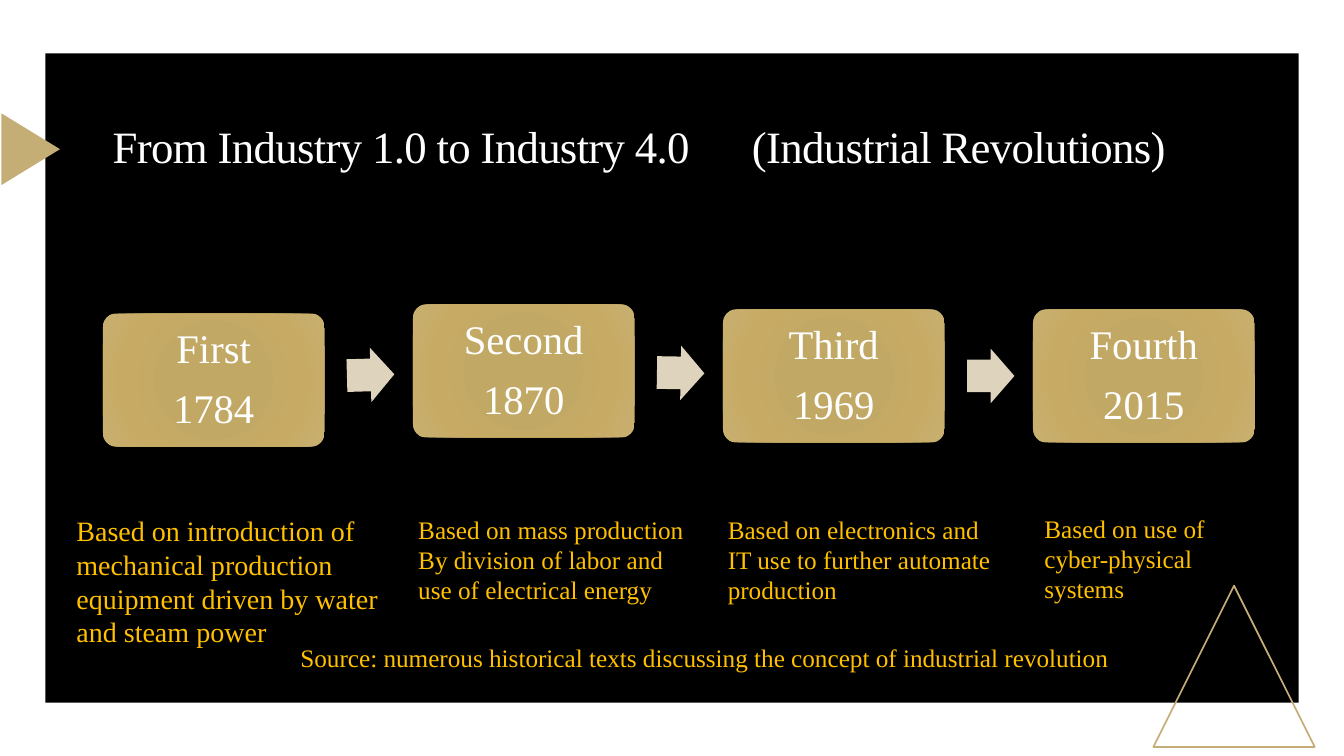
from lxml import etree
from pptx import Presentation
from pptx.dml.color import RGBColor
from pptx.enum.shapes import MSO_SHAPE
from pptx.enum.text import MSO_ANCHOR, PP_ALIGN
from pptx.oxml.ns import qn
from pptx.util import Inches, Pt

RECT, ROUND = MSO_SHAPE.RECTANGLE, MSO_SHAPE.ROUNDED_RECTANGLE
PEAK, ARROW = MSO_SHAPE.ISOSCELES_TRIANGLE, MSO_SHAPE.RIGHT_ARROW
LEFT, CENTER = PP_ALIGN.LEFT, PP_ALIGN.CENTER
TOP, MIDDLE = MSO_ANCHOR.TOP, MSO_ANCHOR.MIDDLE

BLACK = RGBColor(0x00, 0x00, 0x00)
WHITE = RGBColor(0xFF, 0xFF, 0xFF)
CREAM = RGBColor(0xFF, 0xFE, 0xFF)
GOLD = RGBColor(0xC4, 0xAE, 0x75)
SAND = RGBColor(0xDE, 0xD3, 0xBD)
AMBER = RGBColor(0xFF, 0xC0, 0x00)
GLOW = [
    (0, RGBColor(0xC2, 0xA7, 0x62)),
    (34, RGBColor(0xC2, 0xA8, 0x65)),
    (70, RGBColor(0xC7, 0xAB, 0x64)),
    (100, RGBColor(0xC8, 0xB0, 0x71)),
]

FONT = "Times New Roman"
WIDE, HIGH = Inches(13.33), Inches(7.5)

# All places and sizes are percent of the slide's width and height
EDGE, STEP = 7.65, 23.07  # left of the first card, distance between cards
CARDS = [
    ("First", "1784", 41.47),
    ("Second", "1870", 40.27),
    ("Third", "1969", 40.93),
    ("Fourth", "2015", 40.93),
]
ARROWS = [(46, -1.6), (45.73, 1), (46.13, 0)]  # top, turn
NOTES = [
    ((4.95, 67.33, 80.72, 19.33), 20,
     ["Based on introduction of", "mechanical production",
      "equipment driven by water", "and steam power"]),
    ((30.38, 67.33, 22.06, 13.47), 18,
     ["Based on mass production",
      "By division of labor and use of electrical energy"]),
    ((53.41, 67.33, 22.06, 13.47), 18,
     ["Based on electronics and IT use to further automate production"]),
    ((76.97, 67.2, 18.08, 9.47), 18,
     ["Based on use of cyber-physical systems"]),
    ((21.61, 84.27, 66.54, 5.33), 18,
     ["Source: numerous historical texts discussing the concept of "
      "industrial revolution"]),
]


def place(box):
    x, y, w, h = box
    return [int(part) for part in
            (WIDE * x / 100, HIGH * y / 100, WIDE * w / 100, HIGH * h / 100)]


def add_shape(slide, kind, box, fill=None, line=None, turn=0, adjust=()):
    shape = slide.shapes.add_shape(kind, *place(box))
    shape.shadow.inherit = False
    shape.rotation = turn
    for i, value in enumerate(adjust):
        shape.adjustments[i] = value
    if fill is None:
        shape.fill.background()
    else:
        shape.fill.solid()
        shape.fill.fore_color.rgb = fill
    if line is None:
        shape.line.fill.background()
    else:
        shape.line.color.rgb = line
        shape.line.width = Pt(1.25)
    return shape


def add_glow(shape):
    """Swap the solid fill for a round gradient."""
    solid = shape.fill._xPr.find(qn("a:solidFill"))
    grad = etree.Element(qn("a:gradFill"), rotWithShape="1")
    stops = etree.SubElement(grad, qn("a:gsLst"))
    for share, color in GLOW:
        stop = etree.SubElement(stops, qn("a:gs"), pos=str(share * 1000))
        etree.SubElement(stop, qn("a:srgbClr"), val=str(color))
    ring = etree.SubElement(grad, qn("a:path"))
    ring.set("path", "circle")
    etree.SubElement(ring, qn("a:fillToRect"),
                     {side: "100000" for side in "ltrb"})
    solid.getparent().replace(solid, grad)


def write(shape, lines, size=18, color=AMBER, align=LEFT, anchor=TOP,
          pitch=None, after=0, track=0, tab=None):
    frame = shape.text_frame
    frame.word_wrap = True
    frame.vertical_anchor = anchor
    for i, line in enumerate(lines):
        para = frame.add_paragraph() if i else frame.paragraphs[0]
        para.alignment = align
        para.line_spacing = pitch
        para.space_after = Pt(after)
        if tab:
            stops = etree.SubElement(para._p.get_or_add_pPr(), qn("a:tabLst"))
            etree.SubElement(stops, qn("a:tab"), pos=str(tab), algn="l")
        run = para.add_run()
        run.text = line
        run.font.name = FONT
        run.font.size = Pt(size)
        run.font.color.rgb = color
        if track:
            run._r.get_or_add_rPr().set("spc", str(int(track * 100)))


def add_text(slide, box, lines, **style):
    write(slide.shapes.add_textbox(*place(box)), lines, **style)


def add_card(slide, i, name, year, top):
    card = add_shape(slide, ROUND, (EDGE + i * STEP, top, 16.5, 17.6),
                     fill=GOLD, adjust=[0.1])
    add_glow(card)
    write(card, [name, year], size=29, color=WHITE, align=CENTER,
          anchor=MIDDLE, pitch=0.9, after=11.5)


def main():
    deck = Presentation()
    deck.slide_width, deck.slide_height = WIDE, HIGH
    slide = deck.slides.add_slide(deck.slide_layouts[6])

    # Backdrop
    add_shape(slide, RECT, (3.38, 7.07, 93.25, 85.87), fill=BLACK)
    add_shape(slide, PEAK, (85.82, 77.47, 12, 21.33), line=GOLD)
    add_shape(slide, PEAK, (-0.38, 15.87, 5.33, 7.73), fill=GOLD, turn=90)

    # Timeline
    for i, (name, year, top) in enumerate(CARDS):
        add_card(slide, i, name, year, top)
    for i, (top, turn) in enumerate(ARROWS):
        add_shape(slide, ARROW, (25.81 + i * STEP, top, 3.53, 7.2),
                  fill=SAND, turn=turn, adjust=[0.6, 0.5])

    # Title, its second half set at a tab stop
    add_text(slide, (EDGE, 13.07, 85.75, 13.33),
             ["From Industry 1.0 to Industry 4.0\t(Industrial Revolutions)"],
             size=32, color=CREAM, anchor=MIDDLE, pitch=0.9, track=-0.5,
             tab=Inches(6.34))

    # Notes and source
    for box, size, lines in NOTES:
        add_text(slide, box, lines, size=size)

    deck.save("out.pptx")


if __name__ == "__main__":
    main()
